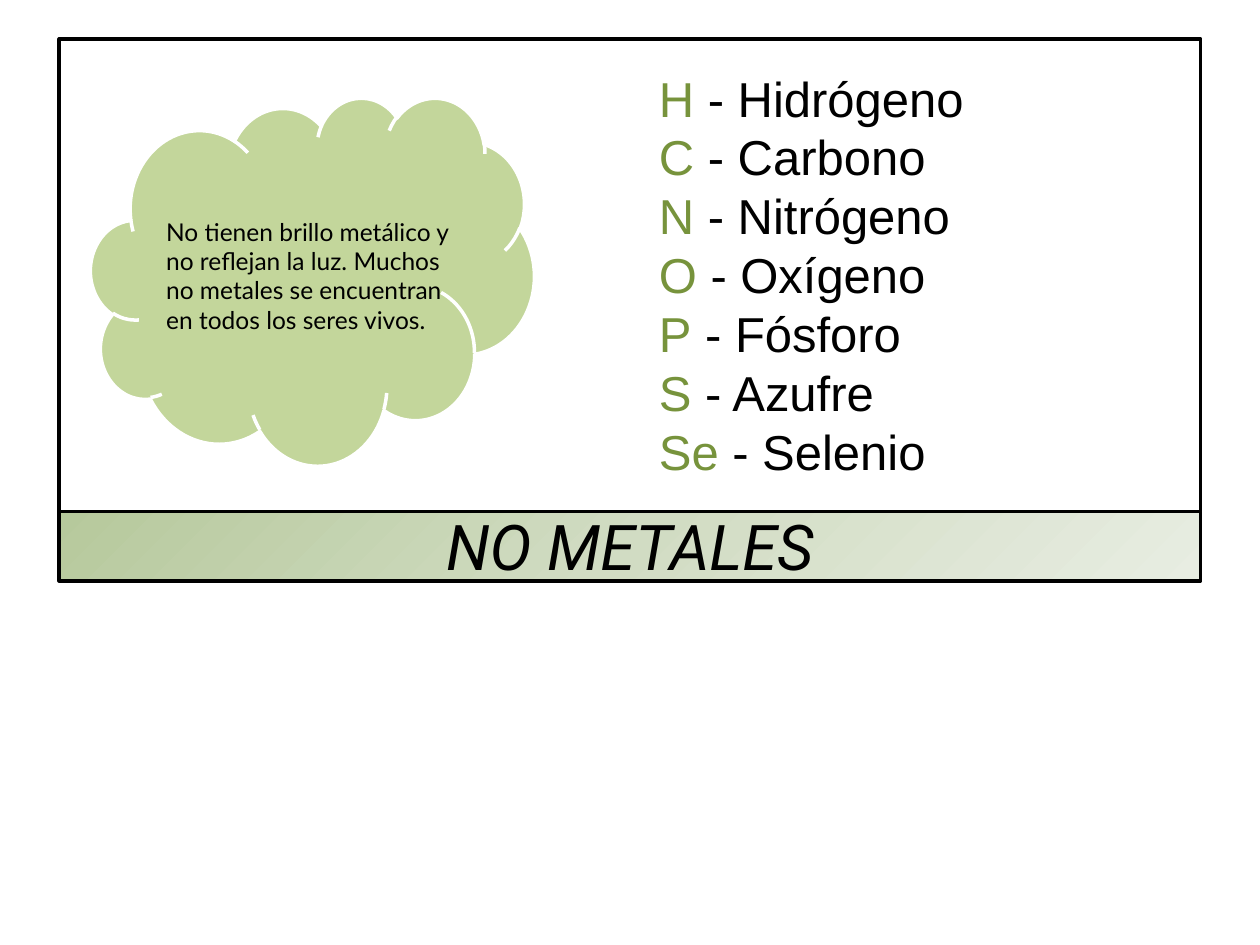
from copy import deepcopy

from lxml import etree
from pptx import Presentation
from pptx.dml.color import RGBColor
from pptx.enum.shapes import MSO_SHAPE
from pptx.enum.text import MSO_ANCHOR, MSO_AUTO_SIZE, PP_ALIGN
from pptx.oxml.ns import qn
from pptx.util import Inches, Pt

RECT, CLOUD = MSO_SHAPE.RECTANGLE, MSO_SHAPE.CLOUD
TOP, FIXED = MSO_ANCHOR.TOP, MSO_AUTO_SIZE.NONE
LEFT, CENTER = PP_ALIGN.LEFT, PP_ALIGN.CENTER

BLACK = RGBColor(0x00, 0x00, 0x00)
WHITE = RGBColor(0xFF, 0xFF, 0xFF)
GREEN = RGBColor(0x77, 0x93, 0x3C)
LIME = RGBColor(0xC3, 0xD6, 0x9B)
FADE = [
    (0, RGBColor(0xB6, 0xC9, 0x9C)),
    (0.5, RGBColor(0xD1, 0xDC, 0xC3)),
    (1, RGBColor(0xE8, 0xED, 0xE2)),
]

ITEMS = [
    ("H", "Hidrógeno"),
    ("C", "Carbono"),
    ("N", "Nitrógeno"),
    ("O", "Oxígeno"),
    ("P", "Fósforo"),
    ("S", "Azufre"),
    ("Se", "Selenio"),
]


def add_form(kind, box, fill, edge):
    form = slide.shapes.add_shape(kind, *map(Inches, box))
    form.shadow.inherit = False
    form.fill.solid()
    form.fill.fore_color.rgb = fill
    form.line.color.rgb = edge
    form.line.width = Pt(2)
    return form


def style(run, name, size, color):
    run.font.name = name
    run.font.size = Pt(size)
    run.font.color.rgb = color


prs = Presentation()
prs.slide_width, prs.slide_height = Inches(10), Inches(7.5)
slide = prs.slides.add_slide(prs.slide_layouts[1])
title, body = slide.placeholders

# Frame and gradient band
add_form(RECT, (0.47, 0.31, 9.06, 3.75), WHITE, BLACK)
band = add_form(RECT, (0.47, 4.06, 9.06, 0.55), WHITE, BLACK)
band.fill.gradient()
band.fill.gradient_angle = 315
first = band.fill.gradient_stops[0]
stops = band._element.spPr.find(qn("a:gradFill")).find(qn("a:gsLst"))
stops.insert(1, deepcopy(stops[0]))
for stop, (place, color) in zip(band.fill.gradient_stops, FADE):
    stop.position = place
    stop.color.rgb = color

# Cloud with its note
add_form(CLOUD, (0.72, 0.77, 3.52, 2.92), LIME, WHITE)
note = slide.shapes.add_textbox(
    Inches(1.22), Inches(1.67), Inches(2.52), Inches(1.04))
note.text_frame.word_wrap = True
note.text_frame.text = (
    "No tienen brillo metálico y no reflejan la luz. "
    "Muchos no metales se encuentran en todos los seres vivos."
)
style(note.text_frame.paragraphs[0].runs[0], "Lato", 14, BLACK)

# Placeholders go in front of the frame and band
for holder, box in (
    (title, (0.47, 3.98, 9.06, 0.71)),
    (body, (5.13, 0.49, 3.57, 3.4)),
):
    slide.shapes._spTree.append(holder._element)
    holder.left, holder.top, holder.width, holder.height = map(Inches, box)
    holder.text_frame.auto_size = FIXED
    holder.text_frame.vertical_anchor = TOP
    holder.text_frame.word_wrap = True

# Title
title.text_frame.text = "NO METALES"
head = title.text_frame.paragraphs[0]
head.alignment = CENTER
style(head.runs[0], "Roboto", 36, BLACK)
head.runs[0].font.italic = True

# List of elements: green symbol, black name
body.text_frame.text = "\n".join(symbol for symbol, name in ITEMS)
for para, (symbol, name) in zip(body.text_frame.paragraphs, ITEMS):
    para.alignment = LEFT
    para.space_before = Pt(0)
    props = para._p.get_or_add_pPr()
    props.set("marL", "0")
    props.set("indent", "0")
    etree.SubElement(props, qn("a:buNone"))
    style(para.runs[0], "Arial", 28, GREEN)
    rest = para.add_run()
    rest.text = f" - {name}"
    style(rest, "Arial", 28, BLACK)

prs.save("out.pptx")
